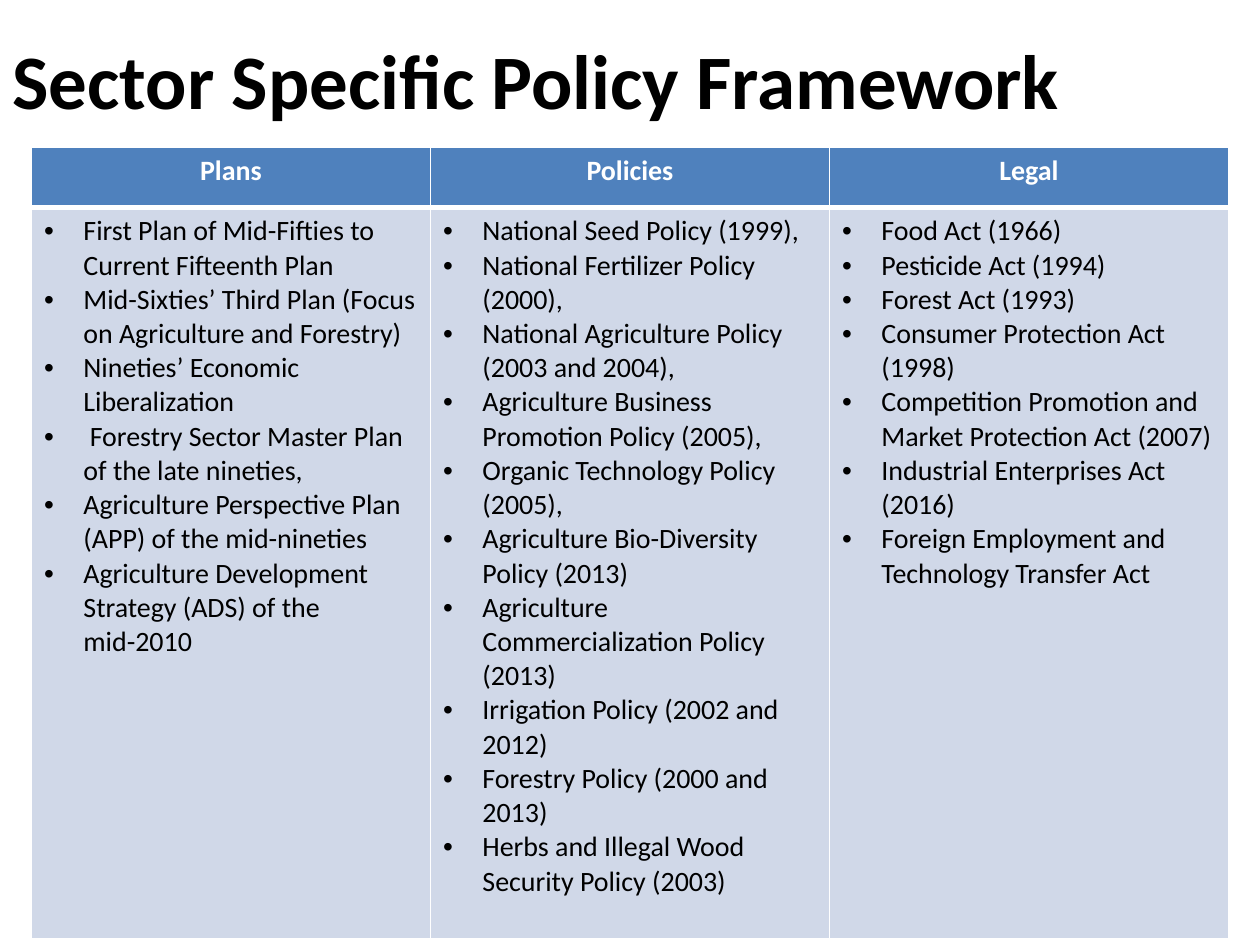
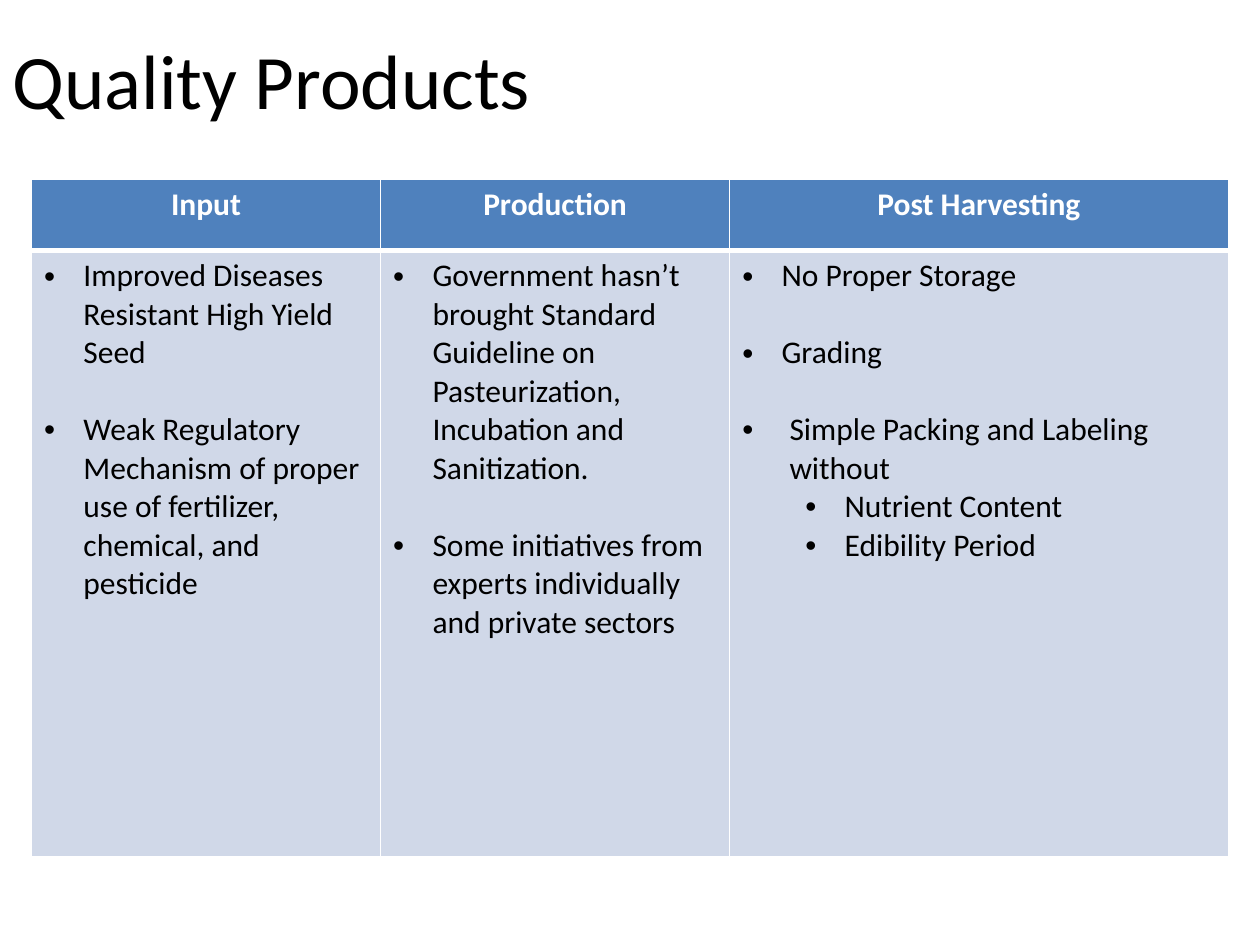
import dataclasses

import lxml.etree
import pptx
import pptx.dml.color
import pptx.enum.text
import pptx.oxml.ns
import pptx.util

Pt = pptx.util.Pt
Align = pptx.enum.text.PP_ALIGN
Anchor = pptx.enum.text.MSO_ANCHOR
qn = pptx.oxml.ns.qn


@dataclasses.dataclass(frozen=True)
class Theme:
    font: str = "Calibri"
    ink: str = "000000"
    paper: str = "FFFFFF"
    header: str = "4F81BD"
    body: str = "D0D8E8"
    title_size: float = 44
    policy_size: float = 16
    product_size: float = 18
    thin_rule: float = 1
    header_rule: float = 3


@dataclasses.dataclass(frozen=True)
class Item:
    """One bullet: gap is the space above, left and hang are its indents."""
    text: str
    gap: float = 0
    left: float = 22.5
    hang: float = 22.5
    level: int = 0


def set_attributes(target, values):
    for name, value in values.items():
        setattr(target, name, value)


class Deck:
    TABLE_LEFT, TABLE_WIDTH = 18, 684

    def __init__(self, theme):
        self.theme = theme
        self.presentation = pptx.Presentation()
        set_attributes(self.presentation, {"slide_width": Pt(720), "slide_height": Pt(540)})
        self.slide = None

    def add_slide(self, heading, bold=False):
        title_only = self.presentation.slide_layouts.get_by_name("Title Only")
        self.slide = self.presentation.slides.add_slide(title_only)
        title = self.slide.shapes.title
        set_attributes(title, {"left": Pt(0), "top": Pt(0), "width": Pt(648), "height": Pt(90)})
        title.text_frame.vertical_anchor = Anchor.MIDDLE
        paragraph = title.text_frame.paragraphs[0]
        paragraph.alignment = Align.LEFT
        self.add_text(paragraph, heading, self.theme.title_size, self.theme.ink, bold)

    def add_text(self, paragraph, text, size, color, bold=False):
        run = paragraph.add_run()
        run.text = text
        set_attributes(run.font, {"name": self.theme.font, "size": Pt(size), "bold": bold})
        run.font.color.rgb = pptx.dml.color.RGBColor.from_string(color)

    def add_table(self, top, shares, heights, columns, size):
        """Lay out a header and bullet row; shares are relative column widths."""
        frame = self.slide.shapes.add_table(
            len(heights), len(columns), Pt(self.TABLE_LEFT), Pt(top),
            Pt(self.TABLE_WIDTH), Pt(sum(heights)))
        table = frame.table
        for row, height in zip(table.rows, heights):
            row.height = Pt(height)
        for index, (heading, items) in enumerate(columns.items()):
            table.columns[index].width = Pt(self.TABLE_WIDTH * shares[index] / sum(shares))
            header, body = table.cell(0, index), table.cell(1, index)
            self.style_cell(header, self.theme.header, "B")
            self.style_cell(body, self.theme.body, "T")
            paragraph = header.text_frame.paragraphs[0]
            paragraph.alignment = Align.CENTER
            self.add_text(paragraph, heading, size, self.theme.paper, True)
            self.add_bullets(body.text_frame, items, size)

    def style_cell(self, cell, color, heavy_side):
        properties = cell._tc.get_or_add_tcPr()
        for side in "LRTB":
            width = self.theme.header_rule if side == heavy_side else self.theme.thin_rule
            line = lxml.etree.SubElement(properties, qn(f"a:ln{side}"), w=str(Pt(width)))
            fill = lxml.etree.SubElement(line, qn("a:solidFill"))
            lxml.etree.SubElement(fill, qn("a:srgbClr"), val=self.theme.paper)
        cell.fill.solid()
        cell.fill.fore_color.rgb = pptx.dml.color.RGBColor.from_string(color)

    def add_bullets(self, frame, items, size):
        for index, item in enumerate(items):
            if isinstance(item, str):
                item = Item(item)
            paragraph = frame.add_paragraph() if index else frame.paragraphs[0]
            set_attributes(paragraph, {"level": item.level, "space_before": Pt(item.gap),
                                       "alignment": Align.LEFT})
            properties = paragraph._p.get_or_add_pPr()
            properties.set("marL", str(Pt(item.left)))
            properties.set("indent", str(-Pt(item.hang)))
            lxml.etree.SubElement(properties, qn("a:buFont"), typeface="Arial")
            lxml.etree.SubElement(properties, qn("a:buChar"), char="•")
            self.add_text(paragraph, item.text, size, self.theme.ink)


POLICY_FRAMEWORK = {
    "Plans": [
        "First Plan of Mid-Fifties to Current Fifteenth Plan",
        "Mid-Sixties’ Third Plan (Focus on Agriculture and Forestry)",
        "Nineties’ Economic Liberalization",
        " Forestry Sector Master Plan of the late nineties,",
        "Agriculture Perspective Plan (APP) of the mid-nineties",
        "Agriculture Development Strategy (ADS) of the mid-2010",
    ],
    "Policies": [
        "National Seed Policy (1999),",
        "National Fertilizer Policy (2000),",
        "National Agriculture Policy (2003 and 2004),",
        "Agriculture Business Promotion Policy (2005),",
        "Organic Technology Policy (2005),",
        "Agriculture Bio-Diversity Policy (2013)",
        "Agriculture Commercialization Policy (2013)",
        "Irrigation Policy (2002 and 2012)",
        "Forestry Policy (2000 and 2013)",
        "Herbs and Illegal Wood Security Policy (2003)",
    ],
    "Legal": [
        "Food Act (1966)",
        "Pesticide Act (1994)",
        "Forest Act (1993)",
        "Consumer Protection Act (1998)",
        "Competition Promotion and Market Protection Act (2007)",
        "Industrial Enterprises Act (2016)",
        "Foreign Employment and Technology Transfer Act",
    ],
}

LINE_GAP = 22
QUALITY_STAGES = {
    "Input": [
        "Improved Diseases Resistant High Yield Seed",
        Item("Weak Regulatory Mechanism of proper use of fertilizer, chemical, and pesticide",
             LINE_GAP),
    ],
    "Production": [
        "Government hasn’t brought Standard Guideline on Pasteurization, "
        "Incubation and Sanitization.",
        Item("Some initiatives from experts individually and private sectors", LINE_GAP),
    ],
    "Post Harvesting": [
        "No Proper Storage",
        Item("Grading", LINE_GAP),
        Item("Simple Packing and Labeling without", LINE_GAP, left=27, hang=27),
        Item("Nutrient Content", left=58.5, level=1),
        Item("Edibility Period", left=58.5, level=1),
    ],
}


def main():
    theme = Theme()
    deck = Deck(theme)
    deck.add_slide("Sector Specific Policy Framework", bold=True)
    deck.add_table(84.25, (1, 1, 1), (34.5, 417.5), POLICY_FRAMEWORK, theme.policy_size)
    deck.add_slide("Quality Products")
    deck.add_table(102.25, (7, 7, 10), (41, 346.5), QUALITY_STAGES, theme.product_size)
    deck.presentation.save("out.pptx")


if __name__ == "__main__":
    main()
